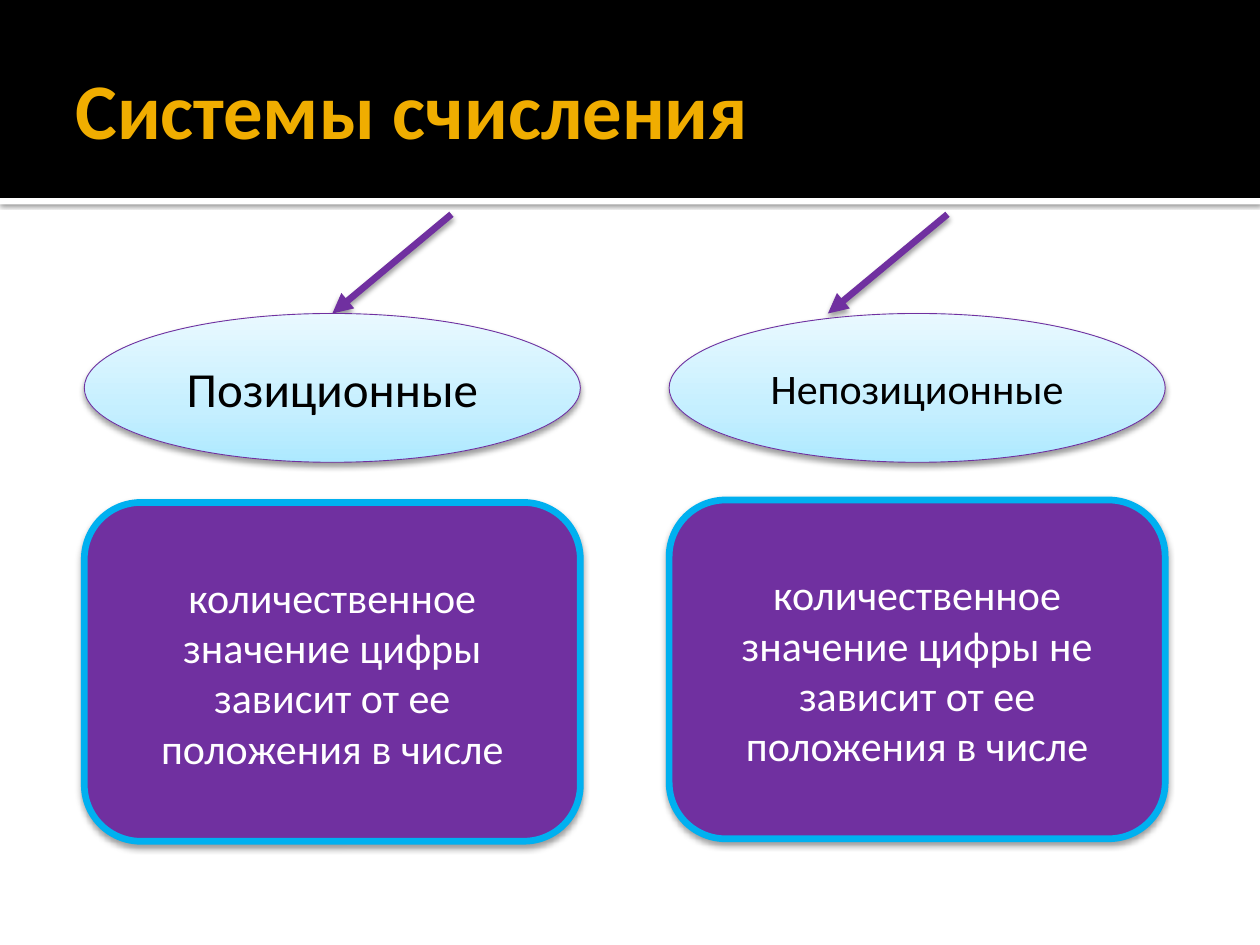
from copy import deepcopy

from lxml import etree
from pptx import Presentation
from pptx import util as u
from pptx.dml.color import RGBColor
from pptx.enum import shapes, text
from pptx.oxml import ns

PURPLE = "7030A0"
color = RGBColor.from_string


def add_shadow(shape, opacity, blur, distance):
    """Append a black shadow falling straight down; blur and distance in points."""
    effects = etree.SubElement(shape._element.spPr, ns.qn("a:effectLst"))
    shadow = etree.SubElement(
        effects, ns.qn("a:outerShdw"), blurRad=str(u.Pt(blur)),
        dist=str(u.Pt(distance)), dir="5400000", rotWithShape="0")
    black = etree.SubElement(shadow, ns.qn("a:srgbClr"), val="000000")
    etree.SubElement(black, ns.qn("a:alpha"), val=str(opacity * 1000))


def write_text(shape, words, size, hex_color, align, bold=False):
    frame = shape.text_frame
    frame.word_wrap = True
    frame.vertical_anchor = text.MSO_ANCHOR.MIDDLE
    paragraph = frame.paragraphs[0]
    paragraph.alignment = align
    run = paragraph.add_run()
    run.text = words
    run.font.name = "Calibri"
    run.font.size = u.Pt(size)
    run.font.bold = bold
    run.font.color.rgb = color(hex_color)


presentation = Presentation()
presentation.slide_width = u.Cm(25.4)
presentation.slide_height = u.Cm(19.05)
slide = presentation.slides.add_slide(presentation.slide_layouts[6])

# Header: white stripe with a shadow, black band, title
stripe = slide.shapes.add_shape(
    shapes.MSO_SHAPE.RECTANGLE, 0, u.Cm(3.99), u.Cm(25.4), u.Cm(0.13))
band = slide.shapes.add_shape(
    shapes.MSO_SHAPE.RECTANGLE, 0, 0, u.Cm(25.4), u.Cm(3.99))
for bar, fill in ((stripe, "FFFFFF"), (band, "000000")):
    bar.fill.solid()
    bar.fill.fore_color.rgb = color(fill)
    bar.line.fill.background()
add_shadow(stripe, 60, 2.5, 0.8)
band.shadow.inherit = False

title = slide.shapes.add_textbox(u.Cm(1.27), u.Cm(0.43), u.Cm(22.86), u.Cm(3.48))
title.text_frame.margin_right = u.Cm(0.13)
write_text(title, "Системы счисления", 45, "F0AD00", text.PP_ALIGN.LEFT, bold=True)

# One column per kind of system: left, arrow start, arrow end, box top, texts
columns = [
    (1.7, 9.1, 6.7, 10.13, "Позиционные", 28,
     "количественное значение цифры зависит от ее положения в числе"),
    (13.49, 19.1, 16.69, 10.08, "Непозиционные", 24,
     "количественное значение цифры не зависит от ее положения в числе"),
]
GRADIENT = [(0, "ADE9FF"), (0.35, "C5EFFF"), (1, "E9F9FF")]

for left, arrow_start, arrow_end, box_top, name, name_size, definition in columns:
    arrow = slide.shapes.add_connector(
        shapes.MSO_CONNECTOR.STRAIGHT,
        u.Cm(arrow_start), u.Cm(4.32), u.Cm(arrow_end), u.Cm(6.32))
    arrow.line.color.rgb = color(PURPLE)
    arrow.line.width = u.Pt(3.82)
    etree.SubElement(arrow.line._get_or_add_ln(), ns.qn("a:tailEnd"), type="triangle")
    add_shadow(arrow, 38, 3.1, 2)

    ellipse = slide.shapes.add_shape(
        shapes.MSO_SHAPE.OVAL, u.Cm(left), u.Cm(6.32), u.Cm(10), u.Cm(3))
    ellipse.fill.gradient()
    ellipse.fill.gradient_angle = 90
    stop_list = ellipse._element.spPr.find(".//" + ns.qn("a:gsLst"))
    stop_list.append(deepcopy(stop_list[0]))
    for stop, (position, hex_color) in zip(ellipse.fill.gradient_stops, GRADIENT):
        stop.position = position
        stop.color.rgb = color(hex_color)
    ellipse.line.color.rgb = color(PURPLE)
    ellipse.line.width = u.Pt(0.5)
    add_shadow(ellipse, 38, 3.5, 2)
    write_text(ellipse, name, name_size, "000000", text.PP_ALIGN.CENTER)
    if arrow_end == left + 5:
        arrow.end_connect(ellipse, 0)

    box = slide.shapes.add_shape(
        shapes.MSO_SHAPE.ROUNDED_RECTANGLE,
        u.Cm(left), u.Cm(box_top), u.Cm(10), u.Cm(6.83))
    box.fill.solid()
    box.fill.fore_color.rgb = color(PURPLE)
    box.line.color.rgb = color("00B0F0")
    box.line.width = u.Pt(3.82)
    add_shadow(box, 38, 3.5, 2)
    write_text(box, definition, 24, "FFFFFF", text.PP_ALIGN.CENTER)

presentation.save("out.pptx")
